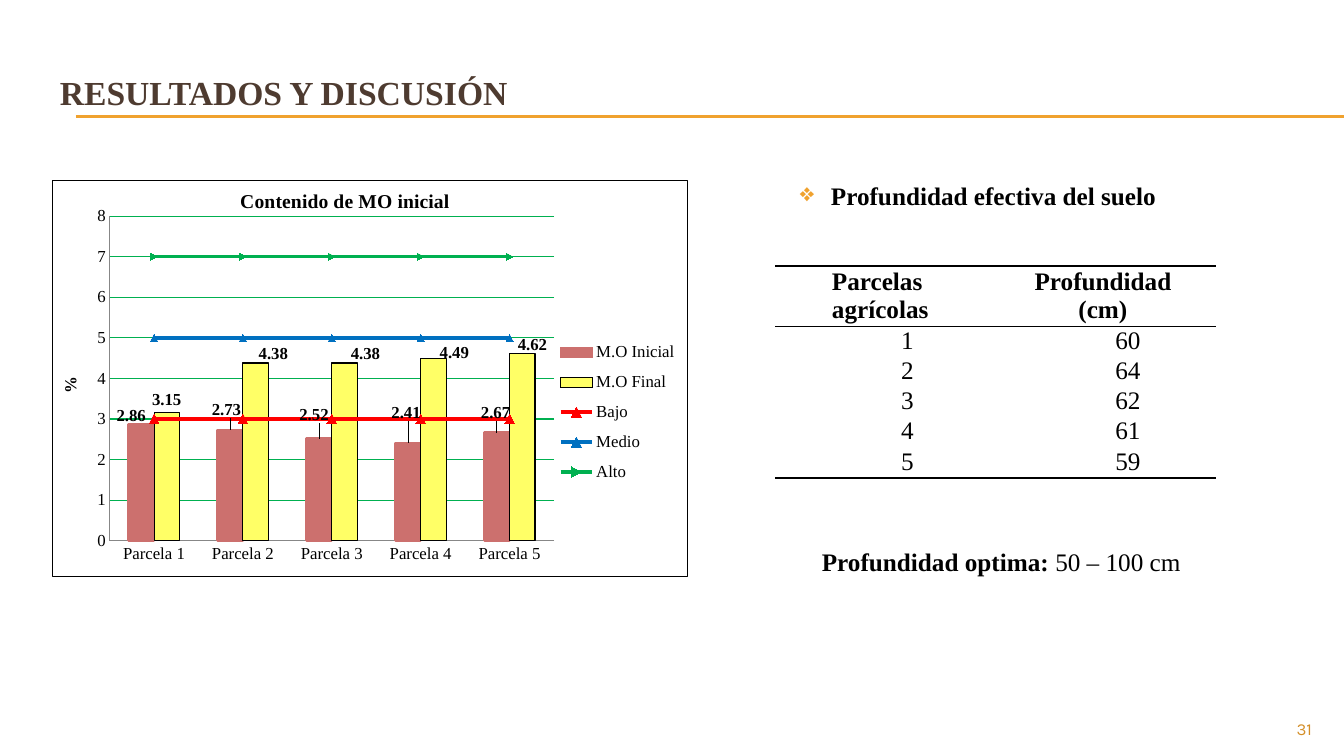
from lxml import etree
from pptx import Presentation
from pptx.chart.data import CategoryChartData
from pptx.dml.color import RGBColor
from pptx.enum.chart import (XL_CHART_TYPE, XL_LABEL_POSITION, XL_LEGEND_POSITION,
                             XL_MARKER_STYLE, XL_TICK_MARK)
from pptx.enum.shapes import MSO_CONNECTOR
from pptx.enum.text import MSO_ANCHOR, PP_ALIGN
from pptx.oxml import parse_xml
from pptx.oxml.ns import nsdecls, qn
from pptx.util import Pt

EMU_PER_PX = 914400 / 100.8
SERIF, SANS = "Times New Roman", "Karla"
BLACK = RGBColor(0x00, 0x00, 0x00)
BROWN = RGBColor(0x4E, 0x3B, 0x30)
ORANGE = RGBColor(0xF0, 0xA2, 0x2E)
OCHRE = RGBColor(0xD4, 0x8F, 0x29)
ROSE = RGBColor(0xCC, 0x70, 0x6E)
YELLOW = RGBColor(0xFF, 0xFF, 0x66)
RED = RGBColor(0xFF, 0x00, 0x00)
BLUE = RGBColor(0x00, 0x70, 0xC0)
GREEN = RGBColor(0x00, 0xB0, 0x50)
GRAY = RGBColor(0x87, 0x87, 0x87)

LEFT, CENTER, RIGHT, JUSTIFY = PP_ALIGN.LEFT, PP_ALIGN.CENTER, PP_ALIGN.RIGHT, PP_ALIGN.JUSTIFY
TOP, MIDDLE = MSO_ANCHOR.TOP, MSO_ANCHOR.MIDDLE
STRAIGHT = MSO_CONNECTOR.STRAIGHT
COLUMNS = XL_CHART_TYPE.COLUMN_CLUSTERED
OUTSIDE_END = XL_LABEL_POSITION.OUTSIDE_END
LEGEND_RIGHT = XL_LEGEND_POSITION.RIGHT
NO_TICK = XL_TICK_MARK.NONE
TRIANGLE, AUTOMATIC = XL_MARKER_STYLE.TRIANGLE, XL_MARKER_STYLE.AUTOMATIC

CHART_BOX = (52, 180, 636, 397)
PLOTS = ["Parcela 1", "Parcela 2", "Parcela 3", "Parcela 4", "Parcela 5"]
BARS = [
    ("M.O Inicial", [2.86, 2.73, 2.52, 2.41, 2.67], ROSE, ROSE, 2,
     [(-10, 4), (-4, -7), (-5, -11), (-2, -18), (-1, -7)]),
    ("M.O Final", [3.15, 4.38, 4.38, 4.49, 4.62], YELLOW, BLACK, 0.75,
     [(0, 0), (18, 4), (21, 3), (21, 7), (10, 4)]),
]
LEVELS = [("Bajo", 3, RED, 2.25, TRIANGLE, 7), ("Medio", 5, BLUE, 3, AUTOMATIC, 5),
          ("Alto", 7, GREEN, 2.25, AUTOMATIC, 5)]
DEPTHS = [60, 64, 62, 61, 59]


def px(length):
    """Turn px into EMU."""
    return round(length * EMU_PER_PX)


def add_run(paragraph, text, size, color, bold=False, font_name=SERIF):
    """Add one formatted run."""
    run = paragraph.add_run()
    run.text = text
    font = run.font
    font.name, font.size, font.bold = font_name, Pt(size), bold
    font.color.rgb = color


def add_text(slide, box, runs, align=LEFT, anchor=TOP):
    """Add a one-paragraph text box and return its paragraph."""
    frame = slide.shapes.add_textbox(*map(px, box)).text_frame
    frame.word_wrap = True
    frame.vertical_anchor = anchor
    paragraph = frame.paragraphs[0]
    paragraph.alignment = align
    for run in runs:
        add_run(paragraph, *run)
    return paragraph


def add_bullet(paragraph, character, color, indent):
    """Give a paragraph a coloured bullet with a hanging indent."""
    properties = paragraph._p.get_or_add_pPr()
    properties.set("marL", str(px(indent)))
    properties.set("indent", str(-px(indent)))
    properties.append(parse_xml(
        f'<a:buClr {nsdecls("a")}><a:srgbClr val="{color}"/></a:buClr>'))
    properties.append(parse_xml(f'<a:buChar {nsdecls("a")} char="{character}"/>'))


def add_rule(slide, y):
    """Draw a thin line from under the title to the right edge."""
    rule = slide.shapes.add_connector(STRAIGHT, px(76), px(y), px(1344), px(y))
    rule.line.color.rgb = ORANGE
    rule.line.width = Pt(0.75)
    etree.SubElement(rule._element.spPr, qn("a:effectLst"))


def set_cell(cell, lines, bold, align, indent, anchor, ruled_sides):
    """Fill a table cell and rule the given sides."""
    cell.margin_left = cell.margin_right = px(7)
    cell.margin_top = cell.margin_bottom = 0
    cell.vertical_anchor = anchor
    for number, line in enumerate(lines):
        frame = cell.text_frame
        paragraph = frame.add_paragraph() if number else frame.paragraphs[0]
        paragraph.alignment = align
        paragraph._p.get_or_add_pPr().set("marL", str(px(indent)))
        add_run(paragraph, line, 18, BLACK, bold)
    for side in "LRTB":
        fill = (f'<a:solidFill><a:srgbClr val="{BLACK}"/></a:solidFill>'
                if side in ruled_sides else "<a:noFill/>")
        cell._tc.get_or_add_tcPr().append(parse_xml(
            f'<a:ln{side} {nsdecls("a")} w="{Pt(1)}">{fill}</a:ln{side}>'))
    cell.fill.background()


def add_depth_table(slide):
    """Add the table of soil depth by plot."""
    table = slide.shapes.add_table(len(DEPTHS) + 1, 2, *map(px, (775, 266, 441, 196))).table
    table.first_row = table.horz_banding = False
    for column, width in zip(table.columns, (215, 226)):
        column.width = px(width)
    for number, row in enumerate(table.rows):
        row.height = px(28 if number else 56)
    set_cell(table.cell(0, 0), ["Parcelas agrícolas"], True, JUSTIFY, 50, MIDDLE, "TB")
    set_cell(table.cell(0, 1), ["Profundidad", "(cm)"], True, CENTER, 0, MIDDLE, "TB")
    for number, depth in enumerate(DEPTHS, 1):
        sides = "T" if number == 1 else "B" if number == len(DEPTHS) else ""
        for column, value in enumerate((number, depth)):
            set_cell(table.cell(number, column), [str(value)], False, CENTER, 50, TOP, sides)


def set_layout(parent, index, **values):
    """Place a chart part by hand, in fractions of the chart."""
    for layout in parent.findall(qn("c:layout")):
        parent.remove(layout)
    items = "".join(f'<c:{name} val="{value}"/>' for name, value in values.items())
    parent.insert(index, parse_xml(
        f'<c:layout {nsdecls("c")}><c:manualLayout>{items}</c:manualLayout></c:layout>'))


def move_levels_to_lines(chart):
    """Move the level series from the columns to a line plot on the same axes."""
    columns = chart.plots[0]._element
    lines = parse_xml(f'<c:lineChart {nsdecls("c")}><c:grouping val="standard"/>'
                      '<c:varyColors val="0"/></c:lineChart>')
    for series in columns.findall(qn("c:ser"))[len(BARS):]:
        for inversion in series.findall(qn("c:invertIfNegative")):
            series.remove(inversion)
        lines.append(series)
    etree.SubElement(lines, qn("c:marker")).set("val", "1")
    for axis in columns.findall(qn("c:axId")):
        etree.SubElement(lines, qn("c:axId")).set("val", axis.get("val"))
    columns.addnext(lines)


def style_bars(series, fill, outline, width, offsets):
    """Colour a column series and shift its value labels."""
    series.format.fill.solid()
    series.format.fill.fore_color.rgb = fill
    series.format.line.color.rgb = outline
    series.format.line.width = Pt(width)
    for number, (right, down) in enumerate(offsets):
        label = series.points[number].data_label
        label.font.bold = True
        label.font.size = Pt(12)
        label.position = OUTSIDE_END
        element = series._element.findall(".//" + qn("c:dLbl"))[number]
        set_layout(element, 1, x=round(right / CHART_BOX[2], 3), y=round(down / CHART_BOX[3], 3))


def style_level(series, color, width, marker_style, marker_size):
    """Colour a level line and its markers."""
    series.smooth = False
    series.format.line.color.rgb = color
    series.format.line.width = Pt(width)
    series.marker.style = marker_style
    series.marker.size = marker_size
    series.marker.format.fill.solid()
    series.marker.format.fill.fore_color.rgb = color
    series.marker.format.line.color.rgb = color


def style_axes(chart):
    """Set the scale, grid and titles of the axes."""
    values, categories = chart.value_axis, chart.category_axis
    values.minimum_scale, values.maximum_scale, values.major_unit = 0, 8, 1
    values.major_gridlines.format.line.color.rgb = GREEN
    values.major_gridlines.format.line.width = Pt(0.75)
    values.tick_labels.number_format = "General"
    values.tick_labels.number_format_is_linked = False
    add_run(values.axis_title.text_frame.paragraphs[0], "%", 12, BLACK, True)
    for axis in (values, categories):
        axis.major_tick_mark = axis.minor_tick_mark = NO_TICK
        axis.format.line.color.rgb = GRAY


def add_content_chart(slide):
    """Add the chart of organic matter with its level lines."""
    data = CategoryChartData()
    data.categories = PLOTS
    for name, values, *_ in BARS:
        data.add_series(name, values)
    for name, level, *_ in LEVELS:
        data.add_series(name, [level] * len(PLOTS))
    chart = slide.shapes.add_chart(COLUMNS, *map(px, CHART_BOX), data).chart
    chart.font.name, chart.font.size = SERIF, Pt(12)
    chart.font.color.rgb = BLACK
    chart.has_title = True
    add_run(chart.chart_title.text_frame.paragraphs[0], "Contenido de MO inicial", 14, BLACK, True)
    set_layout(chart.chart_title._element, 1, xMode="edge", yMode="edge", x=0.29, y=0.01)
    chart.has_legend = True
    chart.legend.position = LEGEND_RIGHT
    chart.legend.include_in_layout = False
    set_layout(chart.legend._element, 1, xMode="edge", yMode="edge", x=0.79, y=0.38, w=0.2, h=0.41)
    move_levels_to_lines(chart)
    columns, lines = chart.plots
    columns.gap_width, columns.overlap = 150, 0
    columns.vary_by_categories = False
    for series, (_, _, *style) in zip(columns.series, BARS):
        style_bars(series, *style)
    for series, (_, _, *style) in zip(lines.series, LEVELS):
        style_level(series, *style)
    style_axes(chart)
    space = chart._chartSpace
    set_layout(space.chart.plotArea, 0, layoutTarget="inner", xMode="edge", yMode="edge",
               x=0.09, y=0.09, w=0.7, h=0.82)
    space.chart.addnext(parse_xml(
        f'<c:spPr {nsdecls("c", "a")}><a:noFill/><a:ln w="{Pt(0.75)}"><a:solidFill>'
        f'<a:srgbClr val="{BLACK}"/></a:solidFill></a:ln></c:spPr>'))


def main():
    """Build and save the slide."""
    presentation = Presentation()
    presentation.slide_width, presentation.slide_height = px(1344), px(756)
    slide = presentation.slides.add_slide(presentation.slide_layouts[6])
    for y in (116, 117):
        add_rule(slide, y)
    add_text(slide, (50, 46, 501, 93), [("RESULTADOS Y DISCUSIÓN", 24, BROWN, True)], anchor=MIDDLE)
    add_text(slide, (1210, 714, 112, 27), [("31", 12, OCHRE, False, SANS)], RIGHT)
    add_depth_table(slide)
    heading = add_text(slide, (790, 175, 410, 40),
                       [("Profundidad efectiva del suelo", 18, BLACK, True)])
    add_bullet(heading, "❖", ORANGE, 31)
    add_text(slide, (812, 541, 507, 40),
             [("Profundidad optima: ", 18, BLACK, True), ("50 – 100 cm", 18, BLACK)])
    add_content_chart(slide)
    presentation.save("out.pptx")


if __name__ == "__main__":
    main()
